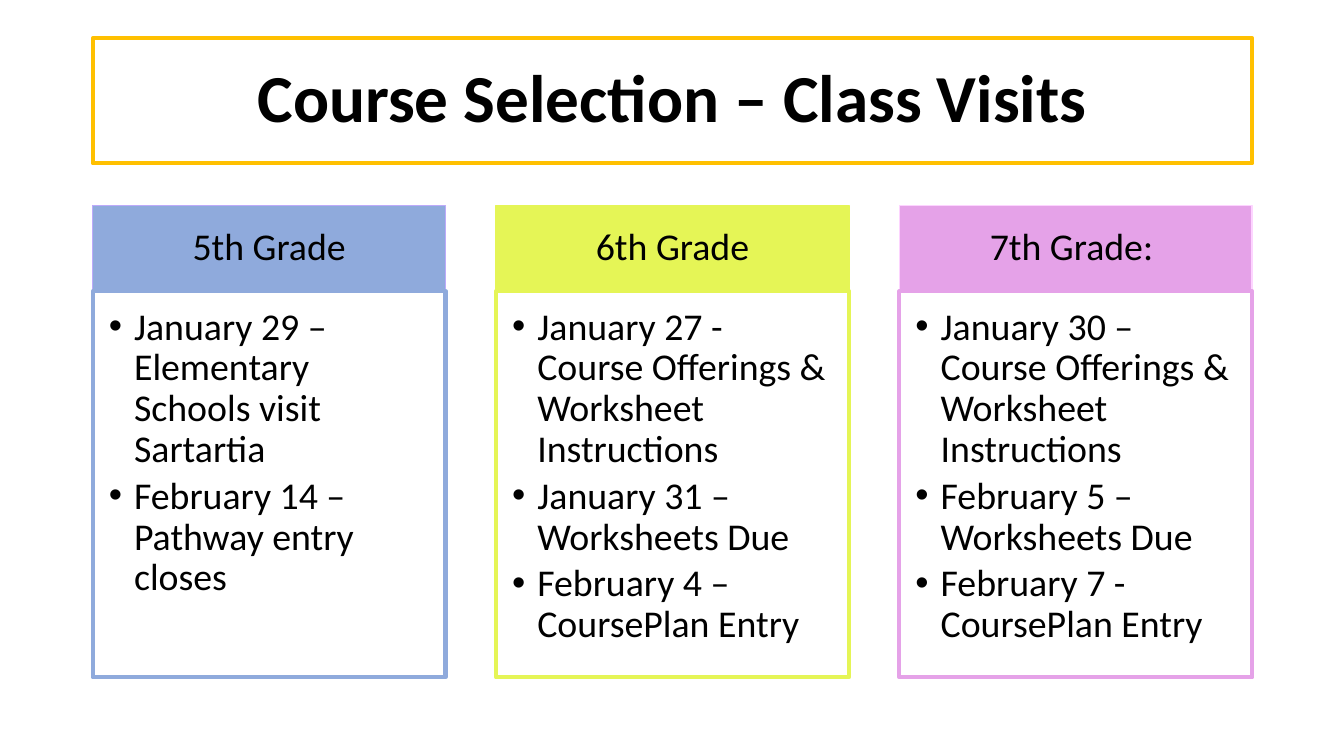
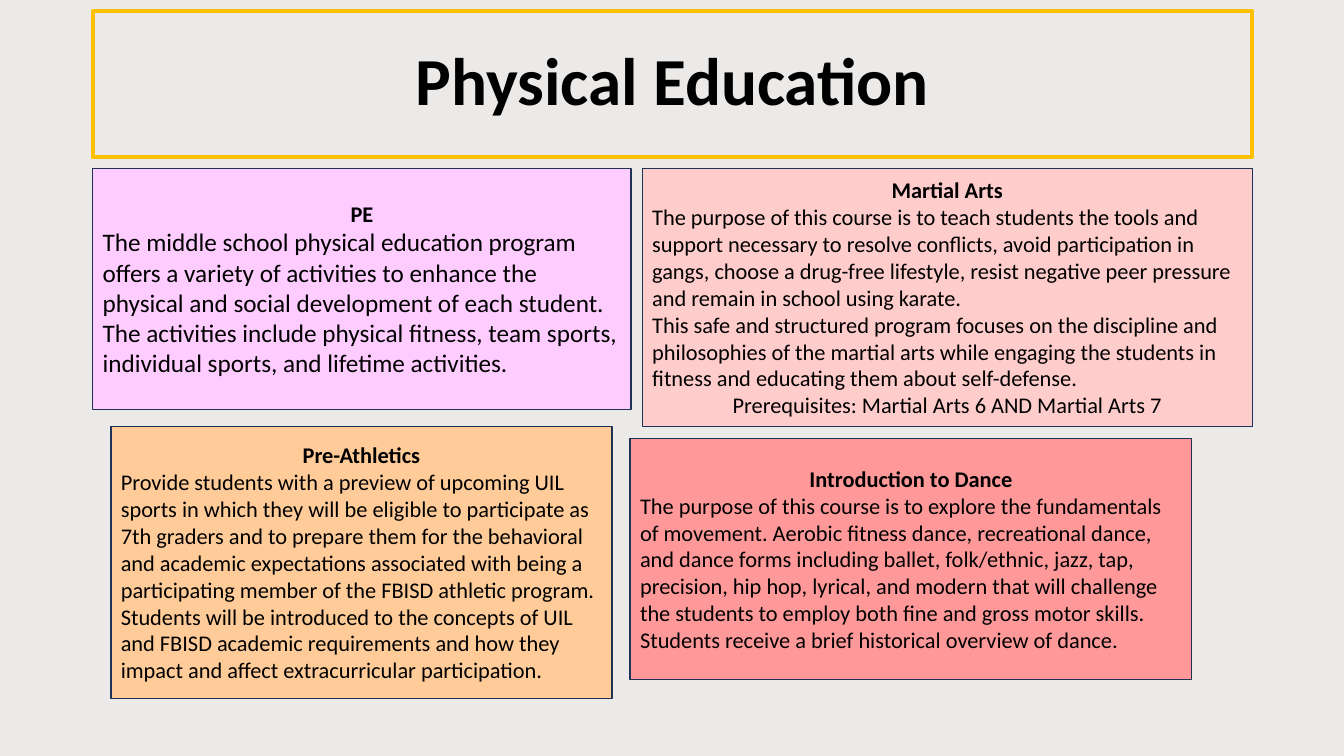
from dataclasses import dataclass

from lxml.etree import SubElement
from pptx import Presentation
from pptx.dml.color import RGBColor
from pptx.enum.shapes import MSO_SHAPE as Preset
from pptx.enum.text import MSO_ANCHOR as Anchor, MSO_AUTO_SIZE as AutoSize, PP_ALIGN as Align
from pptx.oxml.ns import qn
from pptx.shapes.autoshape import Shape
from pptx.slide import Slide
from pptx.util import Inches, Pt

FONT = "Calibri"
BLACK, WHITE = "000000", "FFFFFF"
GOLD, NAVY, TAUPE = "FFC000", "1E3256", "82766A"
SLIDE_WIDTH, SLIDE_HEIGHT = 13.33, 7.5
LEFT, CONTENT_WIDTH = 0.92, 11.5
COLUMN_WIDTH, COLUMN_TOP = 3.5, 2.04
HEADER_HEIGHT, BODY_HEIGHT = 0.85, 3.83
TITLE_ONLY = 5


@dataclass(frozen=True)
class Box:
    left: float
    top: float
    width: float
    height: float


@dataclass(frozen=True)
class Grade:
    name: str
    color: str
    header_line: str
    visits: tuple[str, ...]


@dataclass(frozen=True)
class Course:
    name: str
    box: Box
    color: str
    description: tuple[str, ...]
    size: int = 16
    prerequisites: str = ""


GRADES = (
    Grade("5th Grade", "8FAADC", "BDAAFA", (
        "January 29 – Elementary Schools visit Sartartia",
        "February 14 – Pathway entry closes",
    )),
    Grade("6th Grade", "E5F556", "E5F556", (
        "January 27 - Course Offerings & Worksheet Instructions",
        "January 31 – Worksheets Due",
        "February 4 – CoursePlan Entry",
    )),
    Grade("7th Grade: ", "E5A2E8", "FDD4FF", (
        "January 30 – Course Offerings & Worksheet Instructions",
        "February 5 – Worksheets Due",
        "February 7 - CoursePlan Entry",
    )),
)

COURSES = (
    Course("PE", Box(LEFT, 1.67, 5.34, 2.39), "FFCCFF", (
        "The middle school physical education program offers a variety of activities "
        "to enhance the physical and social development of each student. The activities "
        "include physical fitness, team sports, individual sports, and lifetime activities.",
    ), size=18),
    Course("Martial Arts", Box(6.37, 1.67, 6.05, 2.56), "FFCCCC", (
        "The purpose of this course is to teach students the tools and support "
        "necessary to resolve conflicts, avoid participation in gangs, choose a "
        "drug-free lifestyle, resist negative peer pressure and remain in school "
        "using karate.",
        "This safe and structured program focuses on the discipline and philosophies "
        "of the martial arts while engaging the students in fitness and educating "
        "them about self-defense.",
    ), prerequisites="Prerequisites: Martial Arts 6 AND Martial Arts 7"),
    Course("Introduction to Dance", Box(6.25, 4.35, 5.57, 2.39), "FF9999", (
        "The purpose of this course is to explore the fundamentals of movement. Aerobic "
        "fitness dance, recreational dance, and dance forms including ballet, folk/ethnic, "
        "jazz, tap, precision, hip hop, lyrical, and modern that will challenge the students "
        "to employ both fine and gross motor skills. Students receive a brief historical "
        "overview of dance.",
    )),
    Course("Pre-Athletics", Box(1.1, 4.23, 4.97, 2.7), "FFCC99", (
        "Provide students with a preview of upcoming UIL sports in which they will be "
        "eligible to participate as 7th graders and to prepare them for the behavioral and "
        "academic expectations associated with being a participating member of the FBISD "
        "athletic program. Students will be introduced to the concepts of UIL and FBISD "
        "academic requirements and how they impact and affect extracurricular participation.",
    )),
)


def rgb(color: str) -> RGBColor:
    return RGBColor.from_string(color)


def set_outline(shape: Shape, color: str, width: float) -> None:
    shape.line.color.rgb = rgb(color)
    shape.line.width = Pt(width)


def set_margins(shape: Shape, left: float, top: float, right: float, bottom: float) -> None:
    frame = shape.text_frame
    frame.margin_left, frame.margin_top = Inches(left), Inches(top)
    frame.margin_right, frame.margin_bottom = Inches(right), Inches(bottom)


def add_title(slide: Slide, text: str, top: float, height: float) -> None:
    title = slide.shapes.title
    title.left, title.top = Inches(LEFT), Inches(top)
    title.width, title.height = Inches(CONTENT_WIDTH), Inches(height)
    set_outline(title, GOLD, 3)
    title.text_frame.auto_size = AutoSize.NONE
    title.text_frame.vertical_anchor = Anchor.MIDDLE
    write(title, text, 48, Align.CENTER, bold=True, line_spacing=0.9)


def add_box(slide: Slide, box: Box, fill: str, line: str = "", width: float = 1) -> Shape:
    shape = slide.shapes.add_shape(
        Preset.RECTANGLE, Inches(box.left), Inches(box.top), Inches(box.width), Inches(box.height)
    )
    shape.shadow.inherit = False
    shape.fill.solid()
    shape.fill.fore_color.rgb = rgb(fill)
    if line:
        set_outline(shape, line, width)
    else:
        shape.line.fill.background()
    shape.text_frame.word_wrap = True
    shape.text_frame.vertical_anchor = Anchor.MIDDLE
    return shape


def write(shape: Shape, text: str, size: int, alignment: Align = Align.LEFT, bold: bool = False,
          line_spacing: float = 1.0, space_after: float = 0, bullet: bool = False) -> None:
    frame = shape.text_frame
    paragraph = frame.paragraphs[0] if not frame.text else frame.add_paragraph()
    paragraph.text = text
    paragraph.alignment = alignment
    paragraph.line_spacing = line_spacing
    paragraph.space_after = Pt(space_after)
    if bullet:
        properties = paragraph._p.get_or_add_pPr()
        properties.set("marL", str(Inches(0.25)))
        properties.set("indent", str(Inches(-0.25)))
        SubElement(properties, qn("a:buFont"), typeface="Arial")
        SubElement(properties, qn("a:buChar"), char="•")
    font = paragraph.font
    font.name, font.size, font.bold = FONT, Pt(size), bold
    font.color.rgb = rgb(BLACK)


def add_tint(slide: Slide, color: str, opacity: int) -> None:
    tint = add_box(slide, Box(0, 0, SLIDE_WIDTH, SLIDE_HEIGHT), color)
    fill_color = tint._element.spPr.find(qn("a:solidFill"))[0]
    SubElement(fill_color, qn("a:alpha"), val=str(opacity * 1000))
    slide.shapes._spTree.insert(2, tint._element)


def add_grade(slide: Slide, grade: Grade, left: float) -> None:
    header = add_box(slide, Box(left, COLUMN_TOP, COLUMN_WIDTH, HEADER_HEIGHT),
                     grade.color, grade.header_line)
    set_margins(header, 0.21, 0.12, 0.21, 0.12)
    write(header, grade.name, 27, Align.CENTER, line_spacing=0.9)

    body = add_box(slide, Box(left, COLUMN_TOP + HEADER_HEIGHT, COLUMN_WIDTH, BODY_HEIGHT),
                   WHITE, grade.color, 3)
    body.text_frame.vertical_anchor = Anchor.TOP
    set_margins(body, 0.16, 0.16, 0.21, 0.24)
    for visit in grade.visits:
        write(body, visit, 27, line_spacing=0.9, space_after=4, bullet=True)


def add_course(slide: Slide, course: Course) -> None:
    card = add_box(slide, course.box, course.color, NAVY)
    write(card, course.name, 16, Align.CENTER, bold=True)
    for text in course.description:
        write(card, text, course.size)
    if course.prerequisites:
        write(card, course.prerequisites, course.size, Align.CENTER)


def main() -> None:
    presentation = Presentation()
    presentation.slide_width = Inches(SLIDE_WIDTH)
    presentation.slide_height = Inches(SLIDE_HEIGHT)
    layout = presentation.slide_layouts[TITLE_ONLY]

    visits = presentation.slides.add_slide(layout)
    add_title(visits, "Course Selection – Class Visits", 0.38, 1.24)
    pitch = (CONTENT_WIDTH - COLUMN_WIDTH) / (len(GRADES) - 1)
    for index, grade in enumerate(GRADES):
        add_grade(visits, grade, LEFT + index * pitch)

    education = presentation.slides.add_slide(layout)
    add_tint(education, TAUPE, 15)
    add_title(education, "Physical Education", 0.11, 1.45)
    for course in COURSES:
        add_course(education, course)

    presentation.save("out.pptx")


if __name__ == "__main__":
    main()
